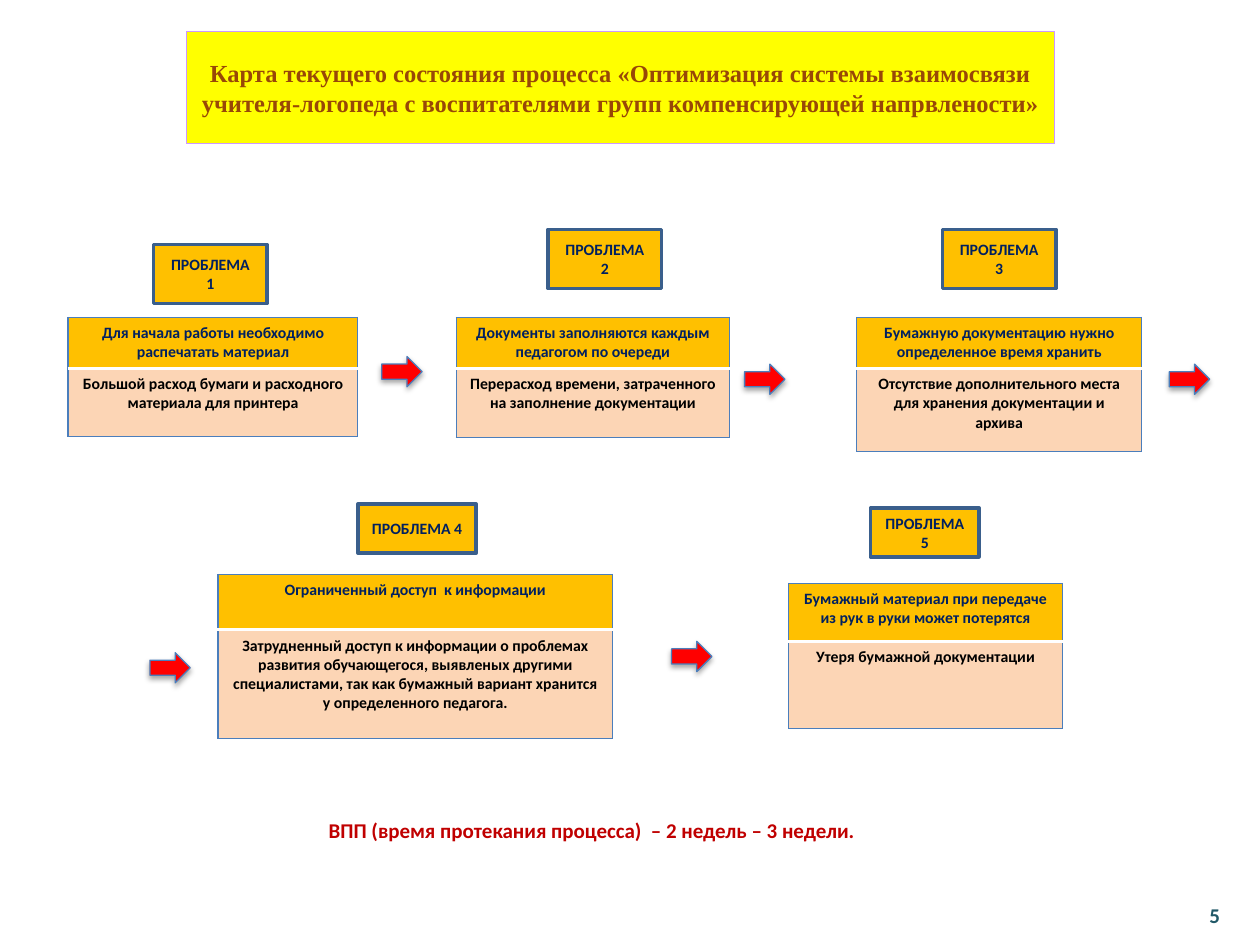
from lxml import etree
from pptx import Presentation
from pptx.dml.color import RGBColor
from pptx.enum import shapes, text
from pptx.oxml import parse_xml
from pptx.oxml.ns import nsdecls, qn
from pptx.util import Inches, Pt

NAVY, AMBER, PEACH, BLUE = "002060", "FFC000", "FCD5B5", "4B7EBC"

PROBLEMS = [
    ("ПРОБЛЕМА 1", (1.22, 1.94, 0.9, 0.47), (0.54, 2.52, 2.3), (0.4, 0.54),
     "Для начала работы необходимо распечатать материал",
     "Большой расход бумаги и расходного материала для принтера"),
    ("ПРОБЛЕМА\n2", (4.35, 1.82, 0.9, 0.47), (3.62, 2.52, 2.17), (0.4, 0.55),
     "Документы заполняются каждым педагогом по очереди",
     "Перерасход времени, затраченного на заполнение документации"),
    ("ПРОБЛЕМА 3", (7.48, 1.82, 0.9, 0.47), (6.8, 2.52, 2.26), (0.4, 0.66),
     "Бумажную документацию нужно определенное время хранить",
     "Отсутствие дополнительного места для хранения документации и архива"),
    ("ПРОБЛЕМА 4", (2.84, 4, 0.94, 0.39), (1.73, 4.56, 3.13), (0.44, 0.86),
     "Ограниченный доступ  к информации",
     "Затрудненный доступ к информации о проблемах развития обучающегося, "
     "выявленых другими специалистами, так как бумажный вариант хранится "
     "у определенного педагога."),
    ("ПРОБЛЕМА 5", (6.91, 4.03, 0.86, 0.39), (6.26, 4.63, 2.17), (0.46, 0.69),
     "Бумажный материал при передаче из рук в руки может потерятся",
     "Утеря бумажной документации"),
]
ARROWS = [(3.03, 2.83), (5.91, 2.89), (9.28, 2.89), (1.19, 5.18), (5.33, 5.09)]


def rgb(value):
    return RGBColor.from_string(value)


def paint(sp, fill, line, width):
    sp.fill.solid()
    sp.fill.fore_color.rgb = rgb(fill)
    sp.line.color.rgb = rgb(line)
    sp.line.width = Pt(width)


def write(tf, content, size, color, font="Calibri", align=text.PP_ALIGN.CENTER):
    tf.text = content
    tf.word_wrap = True
    for p in tf.paragraphs:
        p.alignment = align
        for r in p.runs:
            r.font.name = font
            r.font.size = Pt(size)
            r.font.bold = True
            r.font.color.rgb = rgb(color)


def add_title(slide, content):
    sp = slide.shapes.title
    sp.left, sp.top, sp.width, sp.height = map(Inches, (1.48, 0.25, 6.89, 0.89))
    sp._element.spPr.append(parse_xml(
        f'<a:prstGeom {nsdecls("a")} prst="roundRect"><a:avLst>'
        '<a:gd name="adj" fmla="val 22000"/></a:avLst></a:prstGeom>'))
    paint(sp, "FFFF00", "CC99FF", 0.75)
    write(sp.text_frame, content, 14, "984807", "Times New Roman")
    sp.text_frame.auto_size = text.MSO_AUTO_SIZE.NONE
    sp.text_frame.vertical_anchor = text.MSO_ANCHOR.MIDDLE


def add_label(slide, content, box):
    sp = slide.shapes.add_shape(shapes.MSO_SHAPE.RECTANGLE, *map(Inches, box))
    sp.shadow.inherit = False
    paint(sp, AMBER, "3A5F8C", 2)
    write(sp.text_frame, content, 9, NAVY)
    sp.text_frame.vertical_anchor = text.MSO_ANCHOR.MIDDLE


def add_arrow(slide, left, top):
    sp = slide.shapes.add_shape(shapes.MSO_SHAPE.RIGHT_ARROW, Inches(left),
                                Inches(top), Inches(0.32), Inches(0.24))
    paint(sp, "FF0000", BLUE, 0.75)
    sp.shadow.inherit = False
    effects = sp._element.spPr.find(qn("a:effectLst"))
    shadow = etree.SubElement(effects, qn("a:outerShdw"), blurRad=str(Pt(3.1)),
                              dist=str(Pt(1.8)), dir="5400000", rotWithShape="0")
    color = etree.SubElement(shadow, qn("a:srgbClr"), val="000000")
    etree.SubElement(color, qn("a:alpha"), val="35000")


def set_borders(cell, **special):
    tc_pr = cell._tc.get_or_add_tcPr()
    for i, side in enumerate("LRTB"):
        color, width = special.get(side, (BLUE, 0.75))
        tc_pr.insert(i, parse_xml(
            f'<a:ln{side} {nsdecls("a")} w="{Pt(width)}"><a:solidFill>'
            f'<a:srgbClr val="{color}"/></a:solidFill></a:ln{side}>'))


def add_card(slide, place, heights, problem, effect):
    left, top, width = map(Inches, place)
    table = slide.shapes.add_table(2, 1, left, top, width,
                                   Inches(sum(heights))).table
    divider = ("FFFFFF", 2)
    rows = [(problem, NAVY, AMBER, {"B": divider}),
            (effect, "000000", PEACH, {"T": divider})]
    for i, (content, color, fill, special) in enumerate(rows):
        table.rows[i].height = Inches(heights[i])
        cell = table.cell(i, 0)
        write(cell.text_frame, content, 9, color)
        cell.fill.solid()
        cell.fill.fore_color.rgb = rgb(fill)
        set_borders(cell, **special)


def add_note(slide, content, box, color, align):
    tf = slide.shapes.add_textbox(*map(Inches, box)).text_frame
    write(tf, content, 12, color, align=align)
    tf.vertical_anchor = text.MSO_ANCHOR.MIDDLE


def main():
    prs = Presentation()
    prs.slide_width, prs.slide_height = Inches(10), Inches(7.5)
    slide = prs.slides.add_slide(prs.slide_layouts[5])
    add_title(slide, "Карта текущего состояния процесса «Оптимизация системы "
                     "взаимосвязи учителя-логопеда с воспитателями групп "
                     "компенсирующей напрвлености»")
    for label, box, place, heights, problem, effect in PROBLEMS:
        add_label(slide, label, box)
        add_card(slide, place, heights, problem, effect)
    for left, top in ARROWS:
        add_arrow(slide, left, top)
    add_note(slide, "ВПП (время протекания процесса)  – 2 недель – 3 недели.",
             (2.51, 6.44, 5.04, 0.3), "C00000", text.PP_ALIGN.LEFT)
    add_note(slide, "5", (9.45, 7.11, 0.38, 0.31), "215968", text.PP_ALIGN.CENTER)
    prs.save("out.pptx")


if __name__ == "__main__":
    main()
